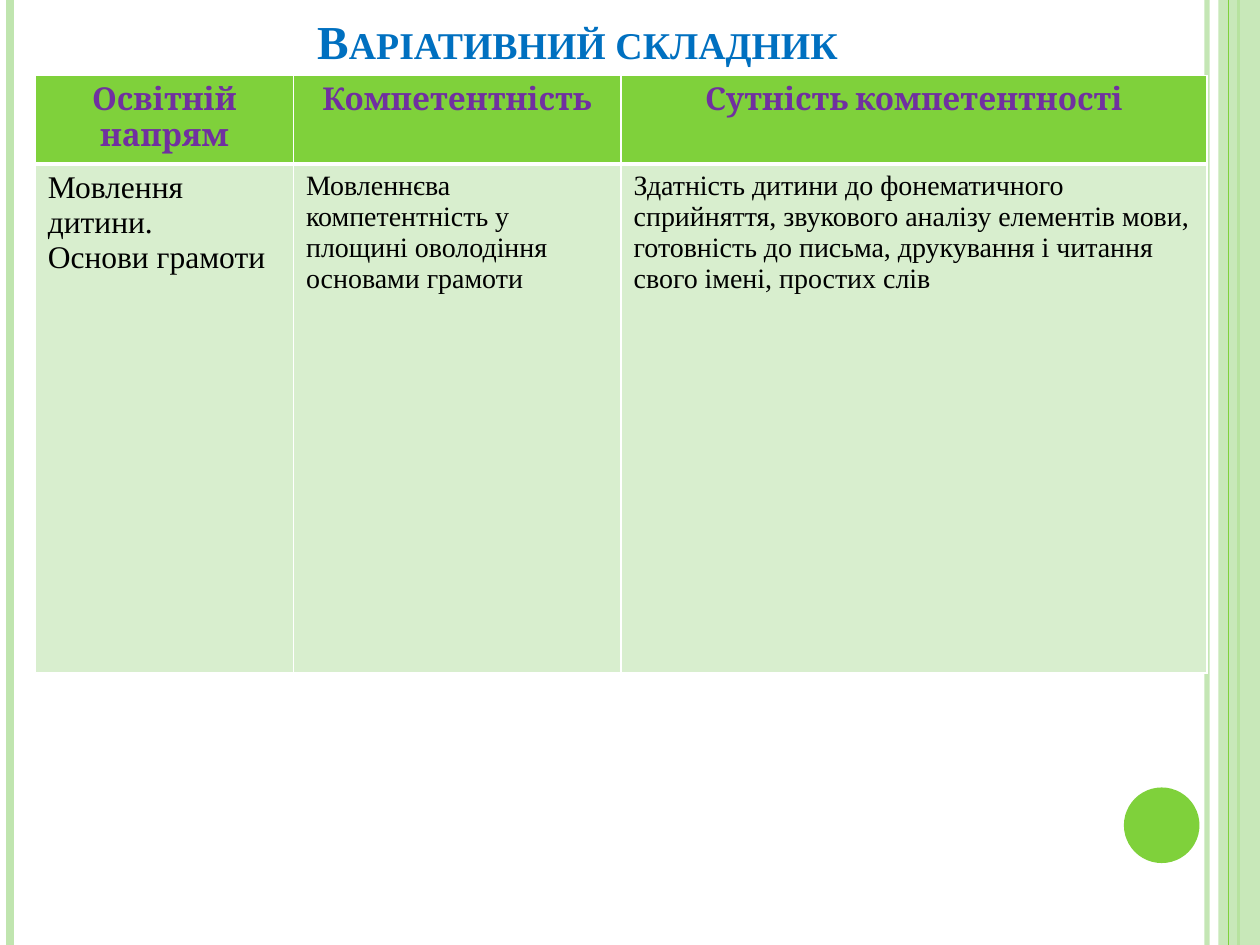
"""Build the slide on the variable component of preschool education."""
from lxml.etree import SubElement
from pptx import Presentation
from pptx.dml.color import RGBColor
from pptx.enum.shapes import MSO_CONNECTOR, MSO_SHAPE
from pptx.enum.text import MSO_ANCHOR, PP_ALIGN
from pptx.oxml.ns import qn
from pptx.util import Inches, Pt

GREEN = RGBColor(0x7F, 0xD1, 0x3B)
PALE_GREEN = RGBColor(0xC0, 0xE5, 0xAF)
CELL_GREEN = RGBColor(0xD8, 0xEE, 0xCE)
BLUE = RGBColor(0x00, 0x70, 0xC0)
PURPLE = RGBColor(0x70, 0x30, 0xA0)
BLACK = RGBColor(0x00, 0x00, 0x00)
WHITE = RGBColor(0xFF, 0xFF, 0xFF)

WIDTH, HEIGHT = 10, 7.5
SERIF = "Times New Roman"
TITLE = "Варіативний складник"
HEADERS = ["Освітній напрям", "Компетентність", "Сутність компетентності"]
BODY = [
    ("Мовлення дитини.\nОснови грамоти", 18),
    ("Мовленнєва компетентність у площині оволодіння основами грамоти", 16),
    ("Здатність дитини до фонематичного сприйняття, звукового аналізу елементів мови, "
     "готовність до письма, друкування і читання свого імені, простих слів", 16),
]
COLUMN_WIDTHS = [2.05, 2.6, 4.65]
ROW_HEIGHTS = [0.7, 4.04]
LEFT_STRIPES = [(9.58, 3, PALE_GREEN, 93), (0.08, 4.5, PALE_GREEN, 100), (9.83, 1.5, GREEN, 100)]
BAND_STRIPE = (9.75, 0.75, GREEN, 100)


def set_opacity(holder, percent):
    color = holder.find(".//" + qn("a:srgbClr"))
    SubElement(color, qn("a:alpha"), val=str(percent * 1000))


def add_stripe(page, x, weight, color, opacity):
    stripe = page.shapes.add_connector(
        MSO_CONNECTOR.STRAIGHT, Inches(x), 0, Inches(x), Inches(HEIGHT))
    stripe.line.color.rgb = color
    stripe.line.width = Pt(weight)
    properties = stripe._element.spPr
    if opacity < 100:
        set_opacity(properties, opacity)
    SubElement(properties, qn("a:effectLst"))


def add_plain_shape(page, kind, left, top, width, height, color):
    shape = page.shapes.add_shape(
        kind, Inches(left), Inches(top), Inches(width), Inches(height))
    shape.shadow.inherit = False
    shape.fill.solid()
    shape.fill.fore_color.rgb = color
    shape.line.fill.background()
    return shape


def format_text(frame, font, size, color, bold, align):
    for para in frame.paragraphs:
        para.alignment = align
        for span in para.runs:
            span.font.name = font
            span.font.size = Pt(size)
            span.font.color.rgb = color
            span.font.bold = bold


def style_cell(cell, fill, top, bottom):
    properties = cell._tc.get_or_add_tcPr()
    for side, weight in (("L", 1), ("R", 1), ("T", top), ("B", bottom)):
        edge = SubElement(properties, qn("a:ln" + side), w=str(Pt(weight)))
        SubElement(SubElement(edge, qn("a:solidFill")), qn("a:srgbClr"), val=str(WHITE))
    cell.fill.solid()
    cell.fill.fore_color.rgb = fill


def add_title(page):
    box = page.shapes.add_textbox(Inches(0.5), Inches(0.13), Inches(8.17), Inches(0.47))
    frame = box.text_frame
    frame.word_wrap = True
    frame.vertical_anchor = MSO_ANCHOR.BOTTOM
    frame.text = TITLE
    format_text(frame, SERIF, 27, BLUE, True, PP_ALIGN.CENTER)
    frame.paragraphs[0].runs[0]._r.get_or_add_rPr().set("cap", "small")


def add_competence_table(page):
    table = page.shapes.add_table(
        len(ROW_HEIGHTS), len(COLUMN_WIDTHS), Inches(0.28), Inches(0.6),
        Inches(sum(COLUMN_WIDTHS)), Inches(sum(ROW_HEIGHTS))).table
    for column, width in zip(table.columns, COLUMN_WIDTHS):
        column.width = Inches(width)
    for row, height in zip(table.rows, ROW_HEIGHTS):
        row.height = Inches(height)
    for index, (header, (text, size)) in enumerate(zip(HEADERS, BODY)):
        head, body = table.cell(0, index), table.cell(1, index)
        head.text_frame.text = header
        format_text(head.text_frame, "Cambria", 18, PURPLE, True, PP_ALIGN.CENTER)
        style_cell(head, GREEN, 1, 3)
        body.text_frame.text = text
        format_text(body.text_frame, SERIF, size, BLACK, False, PP_ALIGN.LEFT)
        style_cell(body, CELL_GREEN, 3, 1)


def main():
    deck = Presentation()
    deck.slide_width, deck.slide_height = Inches(WIDTH), Inches(HEIGHT)
    page = deck.slides.add_slide(deck.slide_layouts[6])
    for stripe in LEFT_STRIPES:
        add_stripe(page, *stripe)
    band = add_plain_shape(page, MSO_SHAPE.RECTANGLE, 9.67, 0, 0.33, HEIGHT, PALE_GREEN)
    set_opacity(band._element.spPr, 87)
    add_stripe(page, *BAND_STRIPE)
    add_plain_shape(page, MSO_SHAPE.OVAL, 8.92, 6.25, 0.6, 0.6, GREEN)
    add_title(page)
    add_competence_table(page)
    deck.save("out.pptx")


if __name__ == "__main__":
    main()
